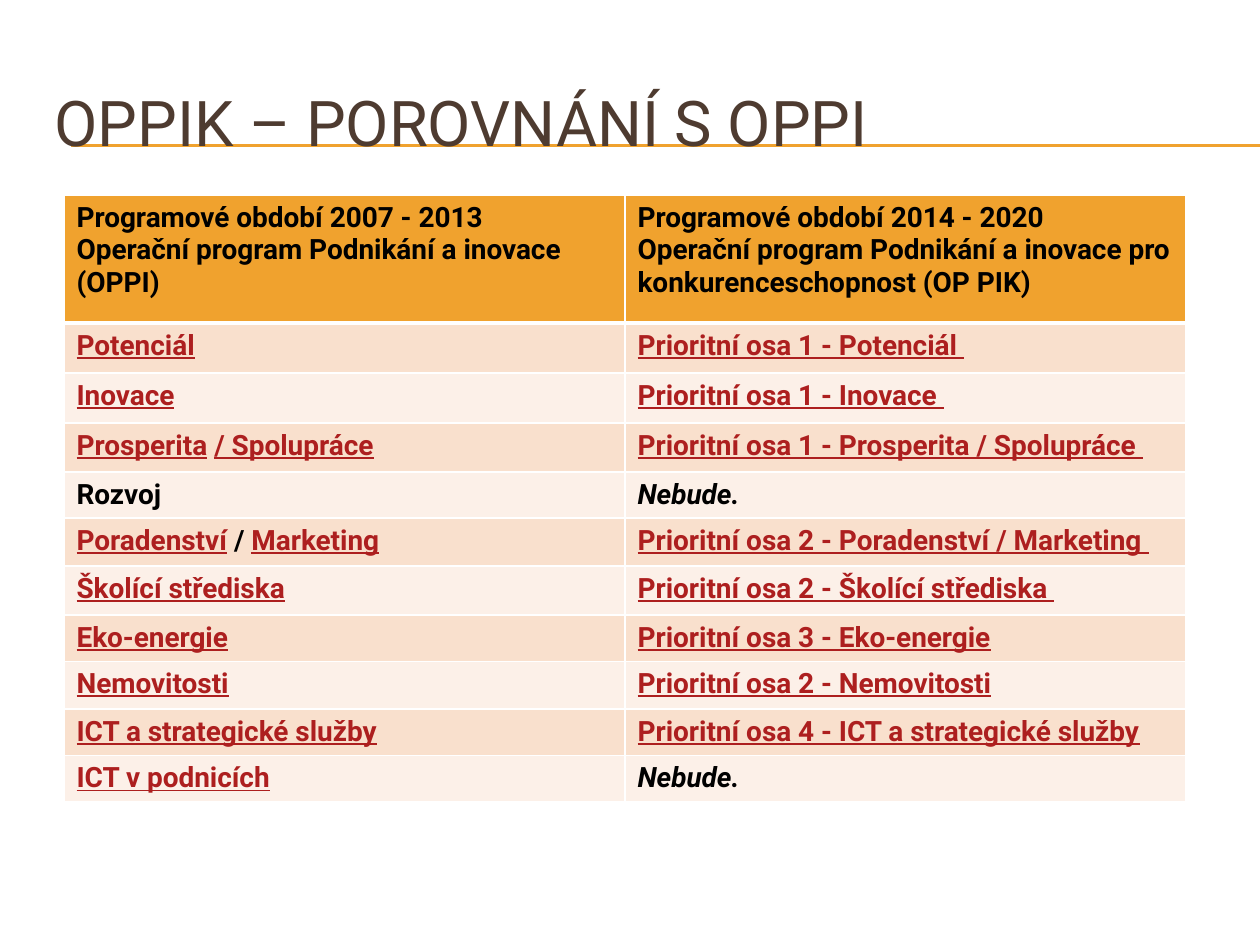
from dataclasses import dataclass

from lxml import etree
from pptx import Presentation
from pptx.dml.color import RGBColor
from pptx.enum.shapes import MSO_CONNECTOR
from pptx.enum.text import MSO_ANCHOR
from pptx.oxml.ns import qn
from pptx.util import Emu, Pt

STRAIGHT = MSO_CONNECTOR.STRAIGHT
MIDDLE = MSO_ANCHOR.MIDDLE
DPI = 126


@dataclass(frozen=True)
class Theme:
    font: str = "Roboto"
    title: str = "4E3B30"
    accent: str = "F0A22E"
    link: str = "AD1F1F"
    text: str = "000000"
    grid: str = "FFFFFF"
    bands: tuple = ("F9E0CD", "FCF0E8")
    title_size: int = 36
    cell_size: int = 16


THEME = Theme()

# Text styles of the table
PLAIN = {"color": THEME.text}
LINK = {"color": THEME.link, "under": True}
NOTE = {"color": THEME.text, "italic": True}

HEADS = [
    ["Programové období 2007 - 2013 ",
     "Operační program Podnikání a inovace (OPPI)"],
    ["Programové období 2014 - 2020",
     "Operační program Podnikání a inovace pro konkurenceschopnost (OP PIK)"],
]

# Row height, then the runs of the left and right cells
NONE = [("Nebude.", NOTE)]
ROWS = [
    (50, [("Potenciál", LINK)], [("Prioritní osa 1 - Potenciál ", LINK)]),
    (50, [("Inovace", LINK)], [("Prioritní osa 1 - Inovace ", LINK)]),
    (49, [("Prosperita", LINK), (" ", PLAIN), ("/ Spolupráce", LINK)],
     [("Prioritní osa 1 - Prosperita / Spolupráce ", LINK)]),
    (45, [("Rozvoj", PLAIN)], NONE),
    (48, [("Poradenství", LINK), (" / ", PLAIN), ("Marketing", LINK)],
     [("Prioritní osa 2 - Poradenství / Marketing ", LINK)]),
    (49, [("Školící střediska", LINK)],
     [("Prioritní osa 2 - Školící střediska ", LINK)]),
    (45, [("Eko-energie", LINK)], [("Prioritní osa 3 - Eko-energie", LINK)]),
    (48, [("Nemovitosti", LINK)], [("Prioritní osa 2 - Nemovitosti", LINK)]),
    (45, [("ICT a strategické služby", LINK)],
     [("Prioritní osa 4 - ICT a strategické služby", LINK)]),
    (45, [("ICT v podnicích", LINK)], NONE),
]


def px(n):
    return Emu(round(n * 914400 / DPI))


def rgb(code):
    return RGBColor.from_string(code)


def add_run(para, text, size, color, bold=False, italic=False, under=False):
    run = para.add_run()
    run.text = text
    font = run.font
    font.name, font.size = THEME.font, Pt(size)
    font.bold, font.italic, font.underline = bold, italic, under
    font.color.rgb = rgb(color)


def add_rule(slide, x, y, end):
    line = slide.shapes.add_connector(STRAIGHT, px(x), px(y), px(end), px(y))
    line.line.color.rgb = rgb(THEME.accent)
    line.line.width = Pt(0.75)
    etree.SubElement(line._element.spPr, qn("a:effectLst"))


def add_title(slide, text, x, y, w, h):
    frame = slide.shapes.add_textbox(px(x), px(y), px(w), px(h)).text_frame
    frame.word_wrap = True
    frame.vertical_anchor = MIDDLE
    add_run(frame.paragraphs[0], text, THEME.title_size, THEME.title)


def set_edges(cell, top, bottom):
    props = cell._tc.get_or_add_tcPr()
    for i, (side, width) in enumerate(
            [("L", 1), ("R", 1), ("T", top), ("B", bottom)]):
        edge = etree.Element(qn(f"a:ln{side}"), w=str(Pt(width)))
        fill = etree.SubElement(edge, qn("a:solidFill"))
        etree.SubElement(fill, qn("a:srgbClr"), val=THEME.grid)
        props.insert(i, edge)


def fill_cell(cell, paras, color, top=1, bottom=1):
    cell.fill.solid()
    cell.fill.fore_color.rgb = rgb(color)
    set_edges(cell, top, bottom)
    frame = cell.text_frame
    for i, runs in enumerate(paras):
        para = frame.add_paragraph() if i else frame.paragraphs[0]
        for text, style in runs:
            add_run(para, text, THEME.cell_size, bold=True, **style)


def add_grid(slide, x, y, col, head):
    high = [head] + [row[0] for row in ROWS]
    table = slide.shapes.add_table(
        len(high), len(HEADS), px(x), px(y),
        px(col * len(HEADS)), px(sum(high))).table
    for column in table.columns:
        column.width = px(col)
    for row, size in zip(table.rows, high):
        row.height = px(size)

    # Header row, with a thick rule below it
    for c, lines in enumerate(HEADS):
        paras = [[(line, PLAIN)] for line in lines]
        fill_cell(table.cell(0, c), paras, THEME.accent, bottom=3)

    # Banded body rows
    for r, (_, *cells) in enumerate(ROWS, 1):
        for c, runs in enumerate(cells):
            fill_cell(table.cell(r, c), [runs], THEME.bands[(r - 1) % 2],
                      top=3 if r == 1 else 1)


def main():
    deck = Presentation()
    deck.slide_width, deck.slide_height = px(1260), px(945)
    slide = deck.slides.add_slide(deck.slide_layouts[6])

    # Double rule behind the title
    for y in (145, 146):
        add_rule(slide, 71, y, 1260)
    add_title(slide, "OPPIK – POROVNÁNÍ S OPPI", 42, 63, 1197, 116)

    # Comparison of the two programme periods
    add_grid(slide, 64, 195, 561, 128)
    deck.save("out.pptx")


if __name__ == "__main__":
    main()
